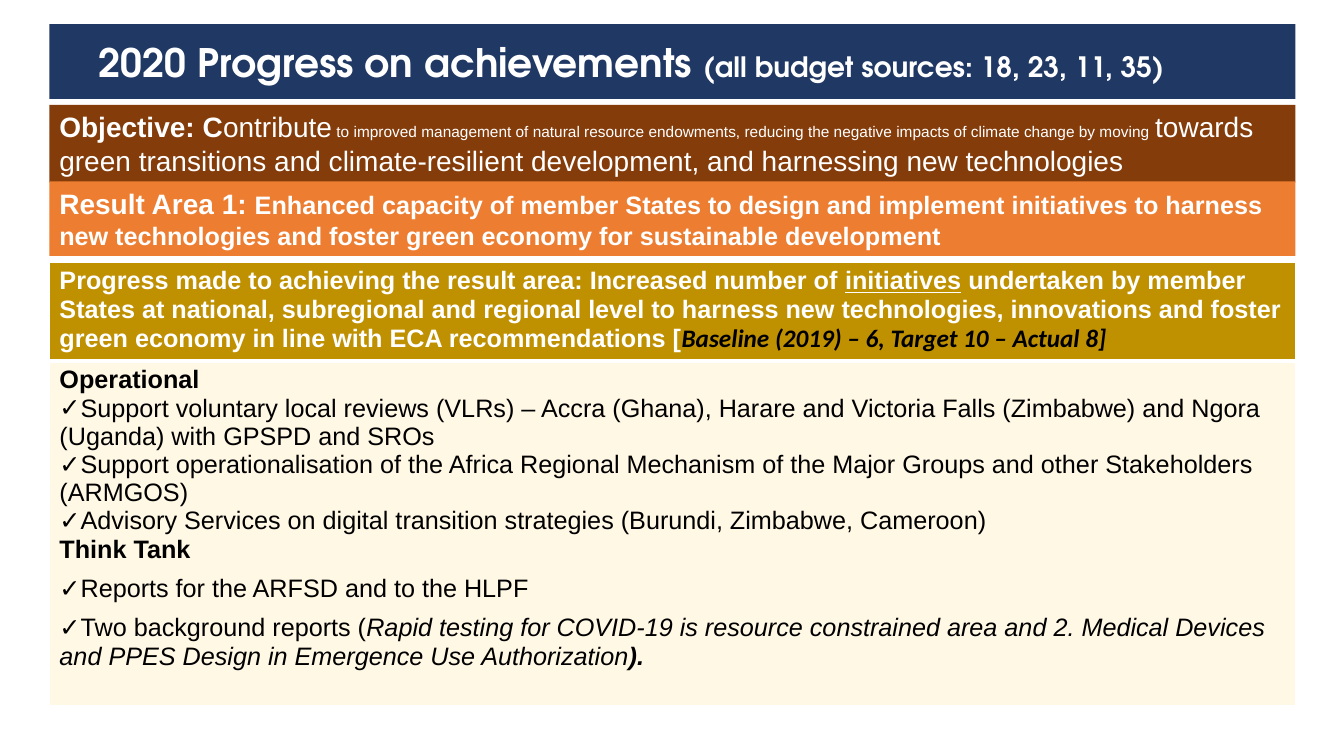
import pptx
import pptx.dml.color
import pptx.enum.shapes
import pptx.enum.text
import pptx.oxml
import pptx.oxml.ns
import pptx.util

Pt = pptx.util.Pt
LEFT, WIDTH = 35.3, 890
WHITE, BLACK = "FFFFFF", "000000"


def color(value):
    return pptx.dml.color.RGBColor.from_string(value)


def add_element(parent, tag, attributes, content=""):
    namespace = pptx.oxml.ns.nsdecls("a")
    parent.append(pptx.oxml.parse_xml(f"<a:{tag} {namespace} {attributes}>{content}</a:{tag}>"))


class ProgressSlide:
    font_name = "Arial"
    text_size = 18

    def __init__(self, presentation):
        self.slide = presentation.slides.add_slide(presentation.slide_layouts[5])

    def add_runs(self, paragraph, runs, text_color):
        paragraph.alignment = pptx.enum.text.PP_ALIGN.LEFT
        paragraph.line_spacing = 1.0
        for text, style in runs:
            run = paragraph.add_run()
            run.text = text
            font = run.font
            font.name = style.get("font", self.font_name)
            font.size = Pt(style.get("size", self.text_size))
            font.bold = style.get("bold", False)
            font.italic = style.get("italic", False)
            font.underline = style.get("underline", False)
            font.color.rgb = color(style.get("color", text_color))

    def frame(self, shape, anchor, inset):
        frame = shape.text_frame
        frame.word_wrap = True
        frame.auto_size = pptx.enum.text.MSO_AUTO_SIZE.NONE
        frame.vertical_anchor = anchor
        frame.margin_left = frame.margin_right = Pt(7.2)
        frame.margin_top = frame.margin_bottom = Pt(inset)
        return frame

    def title(self, top, height, fill, runs):
        shape = self.slide.shapes.title
        shape.left, shape.top = Pt(LEFT), Pt(top)
        shape.width, shape.height = Pt(WIDTH), Pt(height)
        add_element(shape._element.spPr, "prstGeom", 'prst="roundRect"', "<a:avLst/>")
        shape.fill.solid()
        shape.fill.fore_color.rgb = color(fill)
        frame = self.frame(shape, pptx.enum.text.MSO_ANCHOR.MIDDLE, 7.2)
        paragraph = frame.paragraphs[0]
        properties = paragraph._p.get_or_add_pPr()
        properties.set("marL", str(Pt(28)))
        properties.set("indent", "0")
        self.add_runs(paragraph, runs, WHITE)

    def band(self, top, height, fill, runs):
        shape = self.slide.shapes.add_shape(
            pptx.enum.shapes.MSO_SHAPE.RECTANGLE, Pt(LEFT), Pt(top), Pt(WIDTH), Pt(height))
        shape.shadow.inherit = False
        shape.fill.solid()
        shape.fill.fore_color.rgb = color(fill)
        shape.line.fill.background()
        frame = self.frame(shape, pptx.enum.text.MSO_ANCHOR.TOP, 3.6)
        self.add_runs(frame.paragraphs[0], runs, WHITE)

    def table(self, top, rows):
        height = sum(row["height"] for row in rows)
        table = self.slide.shapes.add_table(
            len(rows), 1, Pt(LEFT), Pt(top), Pt(WIDTH), Pt(height)).table
        table.first_row = table.horz_banding = False
        for index, row in enumerate(rows):
            table.rows[index].height = Pt(row["height"])
            self.cell(table.cell(index, 0), row)

    def cell(self, cell, row):
        properties = cell._tc.get_or_add_tcPr()
        for side in ("L", "R", "T", "B"):
            width = Pt(3 if side == row["thick_side"] else 1)
            add_element(properties, f"ln{side}", f'w="{width}"',
                        f'<a:solidFill><a:srgbClr val="{WHITE}"/></a:solidFill>')
        cell.fill.solid()
        cell.fill.fore_color.rgb = color(row["fill"])
        cell.margin_left = cell.margin_right = Pt(7.2)
        cell.margin_top = cell.margin_bottom = Pt(3.6)
        for index, (bullet, space_after, runs) in enumerate(row["paragraphs"]):
            frame = cell.text_frame
            paragraph = frame.add_paragraph() if index else frame.paragraphs[0]
            if bullet:
                paragraph_properties = paragraph._p.get_or_add_pPr()
                paragraph_properties.set("marL", "0")
                paragraph_properties.set("indent", "0")
                add_element(paragraph_properties, "buFont", f'typeface="{self.font_name}"')
                add_element(paragraph_properties, "buChar", 'char="✓"')
            paragraph.space_after = Pt(space_after)
            self.add_runs(paragraph, runs, row["color"])


def main():
    presentation = pptx.Presentation()
    presentation.slide_width, presentation.slide_height = Pt(960), Pt(540)
    progress = ProgressSlide(presentation)
    bold, large = {"bold": True}, {"size": 20}
    heading = {"font": "TeX Gyre Adventor", "bold": True}

    progress.title(17.3, 53.3, "203864", [
        ("2020 Progress on achievements ", {**heading, "size": 28}),
        ("(all budget sources: 18, 23, 11, 35)", {**heading, "size": 20}),
    ])
    progress.band(74.9, 55.4, "843C0B", [
        ("Objective: C", {**large, **bold}),
        ("ontribute", large),
        (" to improved management of natural resource endowments, reducing the negative "
         "impacts of climate change by moving ", {"size": 11}),
        ("towards green transitions and climate-resilient development, and harnessing "
         "new technologies", large),
    ])
    indicator = [
        ("Progress made to achieving the result area: Increased number of ", bold),
        ("initiatives", {**bold, "underline": True}),
        (" undertaken by member States at national, subregional and regional level to harness "
         "new technologies, innovations and foster green economy in line with ECA "
         "recommendations [", bold),
        ("Baseline (2019) – 6, Target 10 – Actual 8]",
         {**bold, "font": "Calibri", "color": BLACK, "italic": True}),
    ]
    activities = [
        (False, 0, [("Operational", bold)]),
        (True, 0, [("Support voluntary local reviews (VLRs) – Accra (Ghana), Harare and Victoria "
                    "Falls (Zimbabwe) and Ngora (Uganda) with GPSPD and SROs", {})]),
        (True, 0, [("Support operationalisation of the Africa Regional Mechanism of the Major "
                    "Groups and other Stakeholders (ARMGOS)", {})]),
        (True, 0, [("Advisory Services on digital transition strategies (Burundi, Zimbabwe, "
                    "Cameroon)", {})]),
        (False, 8, [("Think Tank", bold)]),
        (True, 8, [("Reports for the ARFSD and to the HLPF", {})]),
        (True, 8, [
            ("Two background reports (", {}),
            ("Rapid testing for COVID-19 is resource constrained area and 2. Medical Devices "
             "and PPES Design in Emergence Use Authorization", {"italic": True}),
            (").", {"bold": True, "italic": True}),
        ]),
    ]
    progress.table(187.2, [
        {"height": 70.6, "fill": "BF9000", "color": WHITE, "thick_side": "B",
         "paragraphs": [(False, 0, indicator)]},
        {"height": 246.2, "fill": "FFF8E5", "color": BLACK, "thick_side": "T",
         "paragraphs": activities},
    ])
    progress.band(129.6, 53.3, "ED7D31", [
        ("Result Area 1: ", {**large, **bold}),
        ("Enhanced capacity of member States to design and implement initiatives to harness "
         "new technologies and foster green economy for sustainable development", bold),
    ])
    presentation.save("out.pptx")


if __name__ == "__main__":
    main()
